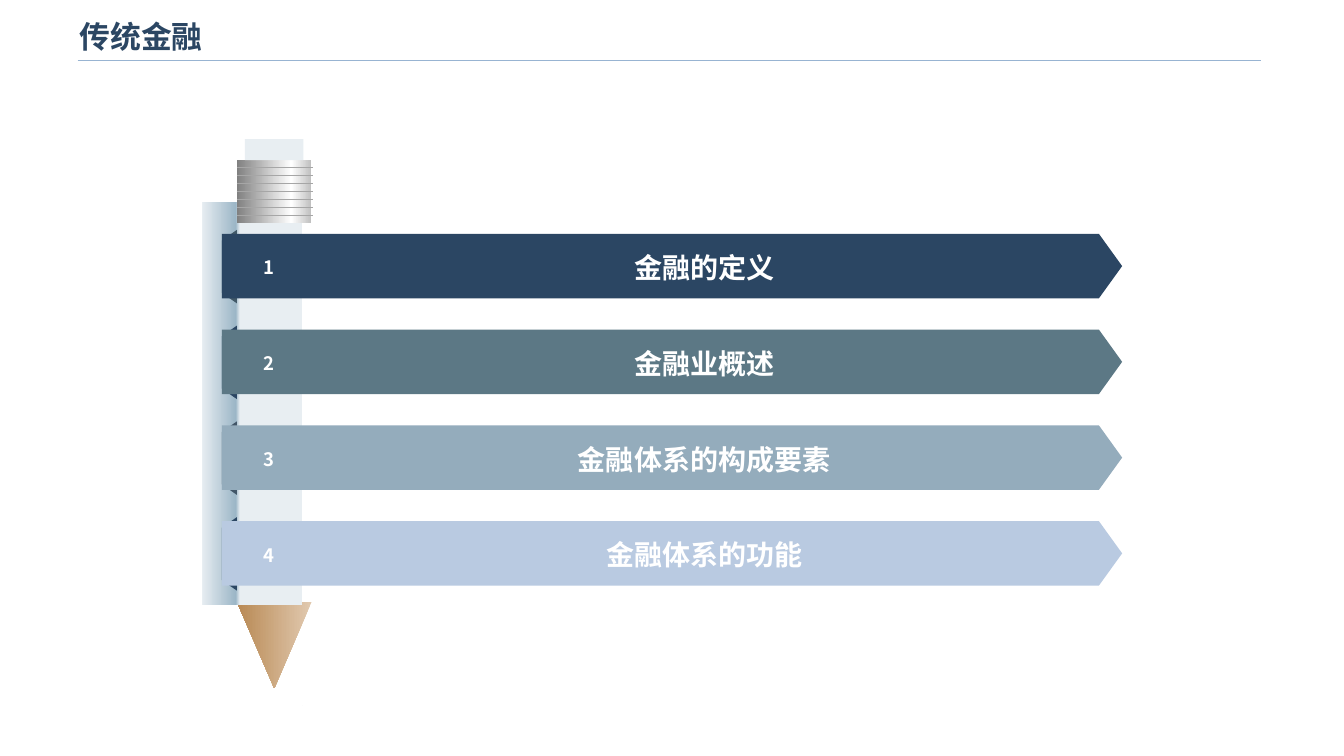
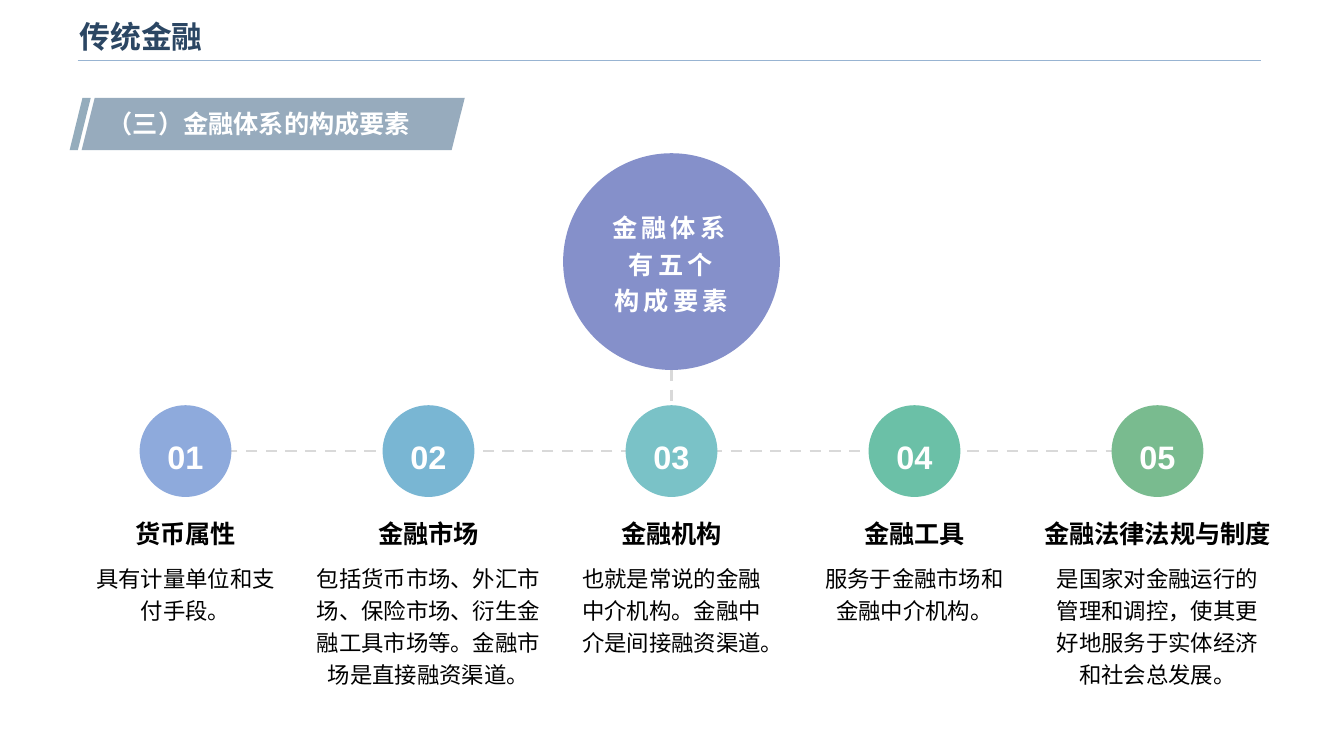
import pptx
from lxml import etree
from pptx.dml.color import RGBColor
from pptx.enum.dml import MSO_LINE
from pptx.enum.shapes import MSO_CONNECTOR, MSO_SHAPE
from pptx.enum.text import MSO_ANCHOR, MSO_AUTO_SIZE, PP_ALIGN
from pptx.oxml.ns import qn
from pptx.util import Inches, Pt

CJK = "Noto Sans CJK SC"
LATIN = "Arial"
NAVY, WHITE, BLACK = "2B4663", "FFFFFF", "000000"
TITLE_RULE, DASH_GREY, RING_GREY = "98B4D2", "D9D9D9", "A6A6A6"
PENCIL_PALE, LEAD = "E8EEF2", "4C504C"

TITLE = "传统金融"

# label, ribbon colour, fold colour
RIBBONS = [
    ("金融的定义", NAVY, "415867"),
    ("金融业概述", "5C7885", NAVY),
    ("金融体系的构成要素", "94ACBC", "425668"),
    ("金融体系的功能", "B9CAE1", NAVY),
]
RIBBON_TOP, RIBBON_PITCH = 2.32, 0.95

# Two numbers are a straight step, six are a Bézier step
PENCIL_BODY = [
    (2.35, 2.21), (3.09, 2.21), (3.09, 5.97),
    (3.08, 6.06, 3.05, 6.09, 3.02, 6.1),
    (2.97, 6.07, 2.99, 6.01, 2.96, 6.03),
    (2.92, 6.04, 2.86, 6.17, 2.8, 6.18),
    (2.75, 6.18, 2.69, 6.06, 2.64, 6.06),
    (2.59, 6.06, 2.55, 6.16, 2.51, 6.15),
    (2.43, 6.12, 2.38, 6.06, 2.35, 6),
]
PENCIL_LEAD = [
    (2.72, 6.59), (2.78, 6.59, 2.81, 6.6, 2.82, 6.61), (2.72, 6.83),
    (2.62, 6.61), (2.64, 6.6, 2.67, 6.59, 2.72, 6.59),
]
BODY_STOPS = [(0, PENCIL_PALE), (34, "9CB6C7"), (38, PENCIL_PALE), (100, PENCIL_PALE)]
FERRULE_STOPS = [(0, "BFBFBF"), (27, "FFFFFF"), (100, "808080")]
WOOD_STOPS = [(0, "E1C9AF"), (100, "B88954")]

SECTION = "（三）金融体系的构成要素"
HUB_LINES = ["金融体系有五个", "构成要素"]

# heading, heading width, description, description width, circle colour
ELEMENTS = [
    ("货币属性", 2.04, "具有计量单位和支付手段。", 2.04, "8EAADC"),
    ("金融市场", 2.04,
     "包括货币市场、外汇市场、保险市场、衍生金融工具市场等。金融市场是直接融资渠道。",
     2.43, "79B6D3"),
    ("金融机构", 2.04, "也就是常说的金融中介机构。金融中介是间接融资渠道。", 2.05, "7AC2C7"),
    ("金融工具", 2.04, "服务于金融市场和金融中介机构。", 2.04, "6BC0A7"),
    ("金融法律法规与制度", 2.55,
     "是国家对金融运行的管理和调控，使其更好地服务于实体经济和社会总发展。",
     2.35, "79BB8F"),
]
FIRST_CENTER, ELEMENT_PITCH = 1.84, 2.41
CIRCLE_TOP, CIRCLE_SIZE = 4.02, 0.91
HUB_TOP, HUB_SIZE = 1.52, 2.15


def color(hex_string):
    return RGBColor.from_string(hex_string)


def format_paragraph(paragraph, size, hex_color, font=CJK, bold=True,
                     align=PP_ALIGN.CENTER, line_spacing=None, tracking=0):
    paragraph.alignment = align
    if line_spacing:
        paragraph.line_spacing = line_spacing
    paragraph.font.size = Pt(size)
    paragraph.font.bold = bold
    paragraph.font.name = font
    paragraph.font.color.rgb = color(hex_color)
    defaults = paragraph._p.pPr.find(qn("a:defRPr"))
    etree.SubElement(defaults, qn("a:ea")).set("typeface", CJK)
    if tracking:
        defaults.set("spc", str(tracking * 100))


def add_text(slide, box, lines, size, hex_color, **style):
    frame = slide.shapes.add_textbox(*map(Inches, box)).text_frame
    frame.word_wrap = True
    frame.text = "\n".join(lines)
    for paragraph in frame.paragraphs:
        format_paragraph(paragraph, size, hex_color, **style)


def paint(shape, fill):
    """Fill with a hex colour, or with (stops, clockwise angle)."""
    shape.shadow.inherit = False
    shape.line.fill.background()
    if isinstance(fill, str):
        shape.fill.solid()
        shape.fill.fore_color.rgb = color(fill)
        return
    stops, angle = fill
    shape.fill.gradient()
    gradient = shape._element.spPr.find(qn("a:gradFill"))
    stop_list = gradient.find(qn("a:gsLst"))
    for old_stop in list(stop_list):
        stop_list.remove(old_stop)
    for percent, hex_color in stops:
        stop = etree.SubElement(stop_list, qn("a:gs"), pos=str(percent * 1000))
        etree.SubElement(stop, qn("a:srgbClr"), val=hex_color)
    gradient.find(qn("a:lin")).set("ang", str(angle * 60000))


def add_shape(slide, kind, box, fill, adjustment=None, rotation=0):
    shape = slide.shapes.add_shape(kind, *map(Inches, box))
    if adjustment is not None:
        shape.adjustments[0] = adjustment
    shape.rotation = rotation
    paint(shape, fill)
    return shape


def add_outline(slide, steps, fill, samples=10):
    """Draw a closed outline, sampling each Bézier step."""
    points = [steps[0]]
    for step in steps[1:]:
        if len(step) == 2:
            points.append(step)
            continue
        controls = [points[-1], step[:2], step[2:4], step[4:]]
        for index in range(1, samples + 1):
            t = index / samples
            weights = ((1 - t) ** 3, 3 * t * (1 - t) ** 2, 3 * t * t * (1 - t), t ** 3)
            points.append(tuple(
                sum(weight * control[axis] for weight, control in zip(weights, controls))
                for axis in (0, 1)))
    builder = slide.shapes.build_freeform(*points[0], scale=Inches(1))
    builder.add_line_segments(points[1:], close=True)
    paint(builder.convert_to_shape(), fill)


def add_line(slide, start, end, hex_color, width, dash=None):
    line = slide.shapes.add_connector(
        MSO_CONNECTOR.STRAIGHT, *map(Inches, (*start, *end)))
    line.line.color.rgb = color(hex_color)
    line.line.width = Pt(width)
    if dash:
        line.line.dash_style = dash
    etree.SubElement(line._element.spPr, qn("a:effectLst"))
    return line


def add_titled_slide(presentation):
    slide = presentation.slides.add_slide(presentation.slide_layouts[5])
    title = slide.shapes.title
    title.left, title.top, title.width, title.height = map(
        Inches, (0.69, 0.09, 10.71, 0.53))
    frame = title.text_frame
    frame.text = TITLE
    frame.auto_size = MSO_AUTO_SIZE.NONE
    frame.vertical_anchor = MSO_ANCHOR.MIDDLE
    format_paragraph(frame.paragraphs[0], 22, NAVY, font=LATIN, align=PP_ALIGN.LEFT)
    add_line(slide, (0.77, 0.6), (12.51, 0.6), TITLE_RULE, 1)
    return slide


def draw_pencil(slide):
    add_shape(slide, MSO_SHAPE.PENTAGON, (2.29, 6.03, 0.86, 0.74),
              (WOOD_STOPS, 90), adjustment=1.16, rotation=90)
    add_outline(slide, PENCIL_BODY, (BODY_STOPS, 0))
    add_shape(slide, MSO_SHAPE.RECTANGLE, (2.35, 1.59, 0.74, 0.62), (FERRULE_STOPS, 180))
    add_shape(slide, MSO_SHAPE.RECTANGLE, (2.43, 1.38, 0.58, 0.21), PENCIL_PALE)
    add_outline(slide, PENCIL_LEAD, LEAD)
    for ring in range(7):
        y = 1.66 + 0.08 * ring
        add_line(slide, (2.35, y), (3.1, y), RING_GREY, 0.5)


def build_agenda(presentation):
    slide = add_titled_slide(presentation)
    draw_pencil(slide)
    for index, (label, ribbon_color, fold_color) in enumerate(RIBBONS):
        top = RIBBON_TOP + RIBBON_PITCH * index
        add_shape(slide, MSO_SHAPE.TRAPEZOID, (1.91, top + 0.25, 0.73, 0.15),
                  fold_color, adjustment=0.7, rotation=270)
        add_shape(slide, MSO_SHAPE.PENTAGON, (2.2, top, 8.93, 0.64),
                  ribbon_color, adjustment=0.36)
        add_text(slide, (4.02, top + 0.05, 5.93, 0.5), [label], 20, WHITE,
                 line_spacing=1.2)
        add_text(slide, (2.25, top + 0.13, 0.83, 0.37), [str(index + 1)], 13.2, WHITE,
                 line_spacing=1.2)


def build_elements(presentation):
    slide = add_titled_slide(presentation)
    add_shape(slide, MSO_SHAPE.PARALLELOGRAM, (0.69, 0.97, 0.21, 0.52), "94ACBC", 0.61)
    add_shape(slide, MSO_SHAPE.PARALLELOGRAM, (0.81, 0.97, 3.8, 0.52), "97ABBD", 0.25)
    add_text(slide, (0.97, 1.03, 3.33, 0.4), [SECTION], 18, WHITE, align=PP_ALIGN.LEFT)

    centers = [FIRST_CENTER + ELEMENT_PITCH * index for index in range(len(ELEMENTS))]
    hub_x = centers[len(centers) // 2]
    axis_y = CIRCLE_TOP + CIRCLE_SIZE / 2
    radius = CIRCLE_SIZE / 2
    add_line(slide, (hub_x, HUB_TOP + HUB_SIZE), (hub_x, CIRCLE_TOP),
             DASH_GREY, 2, MSO_LINE.DASH)
    for end_x in (centers[0] + radius, centers[-1] - radius):
        add_line(slide, (hub_x, axis_y), (end_x, axis_y), DASH_GREY, 2, MSO_LINE.DASH)

    add_shape(slide, MSO_SHAPE.OVAL,
              (hub_x - HUB_SIZE / 2, HUB_TOP, HUB_SIZE, HUB_SIZE), "8590CA")
    add_text(slide, (5.9, 2, 1.51, 1.18), HUB_LINES, 18, WHITE, font=LATIN,
             line_spacing=1.2, tracking=3)

    for number, (center, element) in enumerate(zip(centers, ELEMENTS), start=1):
        heading, heading_width, description, description_width, circle_color = element
        circle = add_shape(slide, MSO_SHAPE.OVAL,
                           (center - radius, CIRCLE_TOP, CIRCLE_SIZE, CIRCLE_SIZE),
                           circle_color)
        circle.text_frame.text = f"{number:02}"
        circle.text_frame.vertical_anchor = MSO_ANCHOR.MIDDLE
        format_paragraph(circle.text_frame.paragraphs[0], 23.2, WHITE, font=LATIN,
                         line_spacing=1.3)
        add_text(slide, (center - heading_width / 2, 5, heading_width, 0.49),
                 [heading], 18, BLACK, line_spacing=1.3)
        add_text(slide, (center - description_width / 2, 5.5, description_width, 1.39),
                 [description], 16, BLACK, bold=False, line_spacing=1.2)


def main():
    presentation = pptx.Presentation()
    presentation.slide_width = Inches(13.33)
    presentation.slide_height = Inches(7.5)
    build_agenda(presentation)
    build_elements(presentation)
    presentation.save("out.pptx")


if __name__ == "__main__":
    main()
